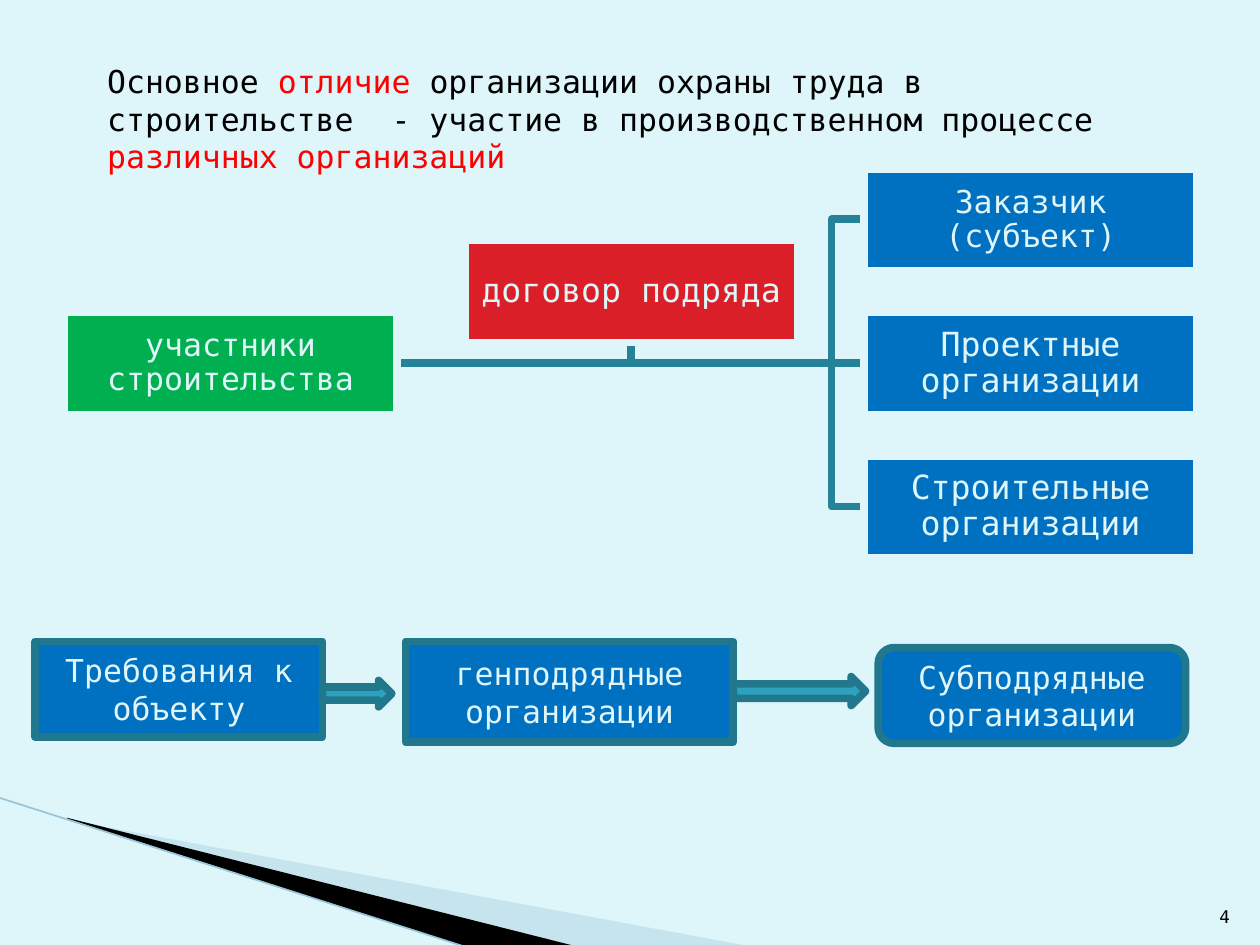
"""Build the slide on the participants in construction work safety."""
from lxml import etree
from pptx import Presentation
from pptx.dml.color import RGBColor
from pptx.enum.shapes import MSO_CONNECTOR, MSO_SHAPE
from pptx.enum.text import MSO_ANCHOR, MSO_AUTO_SIZE, PP_ALIGN
from pptx.oxml.ns import qn
from pptx.util import Inches, Pt

RECT = MSO_SHAPE.RECTANGLE
ROUNDED = MSO_SHAPE.ROUNDED_RECTANGLE
ARROW = MSO_SHAPE.RIGHT_ARROW
STRAIGHT = MSO_CONNECTOR.STRAIGHT
TOP, MIDDLE, BOTTOM = MSO_ANCHOR.TOP, MSO_ANCHOR.MIDDLE, MSO_ANCHOR.BOTTOM
LEFT, CENTER, RIGHT = PP_ALIGN.LEFT, PP_ALIGN.CENTER, PP_ALIGN.RIGHT
FIXED = MSO_AUTO_SIZE.NONE

FONT = "DejaVu Sans Mono"
PALE = RGBColor(0xDE, 0xF5, 0xFA)
BLACK = RGBColor(0x00, 0x00, 0x00)
RED = RGBColor(0xFF, 0x00, 0x00)
CRIMSON = RGBColor(0xDA, 0x1F, 0x28)
GREEN = RGBColor(0x00, 0xB0, 0x50)
BLUE = RGBColor(0x00, 0x70, 0xC0)
BRANCH = RGBColor(0x24, 0x82, 0x99)
BORDER = RGBColor(0x21, 0x78, 0x8D)
TEAL = RGBColor(0x2D, 0xA2, 0xBF)
WEDGE = RGBColor(0xA0, 0xCB, 0xDC)
EDGE = RGBColor(0x97, 0xC5, 0xD8)
THICK = Pt(4.33)

deck = Presentation()
deck.slide_width, deck.slide_height = Inches(10), Inches(7.5)
page = deck.slides.add_slide(deck.slide_layouts[5])
page.background.fill.solid()
page.background.fill.fore_color.rgb = PALE


def add_outline(points, closed):
    """Add a freeform through points given in inches."""
    corners = [(Inches(x), Inches(y)) for x, y in points]
    builder = page.shapes.build_freeform(*corners[0])
    builder.add_line_segments(corners[1:], close=closed)
    outline = builder.convert_to_shape()
    outline.shadow.inherit = False
    return outline


def add_panel(kind, place, fill, border, text="", size=18):
    """Add a filled shape with centred text."""
    panel = page.shapes.add_shape(kind, *[Inches(value) for value in place])
    panel.shadow.inherit = False
    panel.fill.solid()
    panel.fill.fore_color.rgb = fill
    panel.line.color.rgb = border
    panel.line.width = THICK
    if text:
        frame = panel.text_frame
        frame.text = text
        frame.word_wrap = True
        frame.vertical_anchor = MIDDLE
        para = frame.paragraphs[0]
        para.alignment = CENTER
        font = para.runs[0].font
        font.name, font.size, font.color.rgb = FONT, Pt(size), PALE
    return panel


wedges = [
    ([(0.55, 6.51), (5.95, 7.51), (4.56, 7.51), (0.55, 6.5)], WEDGE),
    ([(0.53, 6.49), (4.57, 7.51), (3.72, 7.52), (0.54, 6.5)], BLACK),
]
for points, color in wedges:
    wedge = add_outline(points, True)
    wedge.fill.solid()
    wedge.fill.fore_color.rgb = color
    wedge.line.fill.background()
    if color == WEDGE:
        tint = wedge.fill._xPr.find(qn("a:solidFill"))[0]
        etree.SubElement(tint, qn("a:alpha")).set("val", "40000")

edge = page.shapes.add_connector(
    STRAIGHT, Inches(-0.01), Inches(6.33), Inches(3.71), Inches(7.52))
edge.line.color.rgb = EDGE
edge.line.width = Pt(0.95)
etree.SubElement(edge._element.spPr, qn("a:effectLst"))

root_x, bend_x, branch_x, root_y = 3.16, 6.6, 6.86, 2.88
row_step, box_width, box_height = 1.14, 2.64, 0.81
root = (root_x, root_y)
branches = [[root, (5.01, root_y), (5.01, 2.72)], [root, (branch_x, root_y)]]
for end_y in (root_y + row_step, root_y - row_step):
    branches.append([root, (bend_x, root_y), (bend_x, end_y), (branch_x, end_y)])
for points in branches:
    branch = add_outline(points, False)
    branch.fill.background()
    branch.line.color.rgb = BRANCH
    branch.line.width = THICK

middle_y = 2.48
chart_boxes = [
    ("участники строительства", 0.51, middle_y, GREEN, 18),
    ("Заказчик (субъект)", branch_x, middle_y - row_step, BLUE, 18),
    ("Проектные организации", branch_x, middle_y, BLUE, 19),
    ("Строительные организации", branch_x, middle_y + row_step, BLUE, 19),
    ("договор подряда", 3.69, middle_y - row_step / 2, CRIMSON, 19),
]
for text, left, top, fill, size in chart_boxes:
    box = add_panel(RECT, (left, top, box_width, box_height), fill, PALE, text, size)
    frame = box.text_frame
    frame.margin_left = frame.margin_right = Inches(0.01)
    frame.margin_top = frame.margin_bottom = Inches(0.01)
    frame.paragraphs[0].line_spacing = 0.9

chain = [
    (RECT, (0.28, 5.09, 2.28, 0.76), BLUE, "Требования к объекту"),
    (RECT, (3.22, 5.09, 2.6, 0.8), BLUE, "генподрядные организации"),
    (ROUNDED, (6.97, 5.14, 2.44, 0.76), BLUE, "Субподрядные организации"),
    (ARROW, (2.56, 5.4, 0.55, 0.21), TEAL, ""),
    (ARROW, (5.82, 5.37, 1.05, 0.23), TEAL, ""),
]
for kind, place, fill, text in chain:
    add_panel(kind, place, fill, BORDER, text)

number = page.shapes.add_textbox(Inches(9.46), Inches(7.01), Inches(0.4), Inches(0.4))
number.text_frame.text = "4"
number.text_frame.word_wrap = True
number.text_frame.vertical_anchor = BOTTOM
para = number.text_frame.paragraphs[0]
para.alignment = RIGHT
font = para.runs[0].font
font.name, font.size, font.color.rgb = FONT, Pt(10), BLACK

title = page.shapes.title
title.left, title.top = Inches(0.75), Inches(0.44)
title.width, title.height = Inches(8.43), Inches(0.71)
frame = title.text_frame
frame.word_wrap = True
frame.auto_size = FIXED
frame.vertical_anchor = TOP
para = frame.paragraphs[0]
para.alignment = LEFT
heading = [
    ("Основное ", BLACK),
    ("отличие", RED),
    (" организации охраны труда в строительстве  - участие в производственном процессе ", BLACK),
    ("различных организаций", RED),
]
for text, color in heading:
    span = para.add_run()
    span.text = text
    span.font.name, span.font.size, span.font.color.rgb = FONT, Pt(18), color

deck.save("out.pptx")
